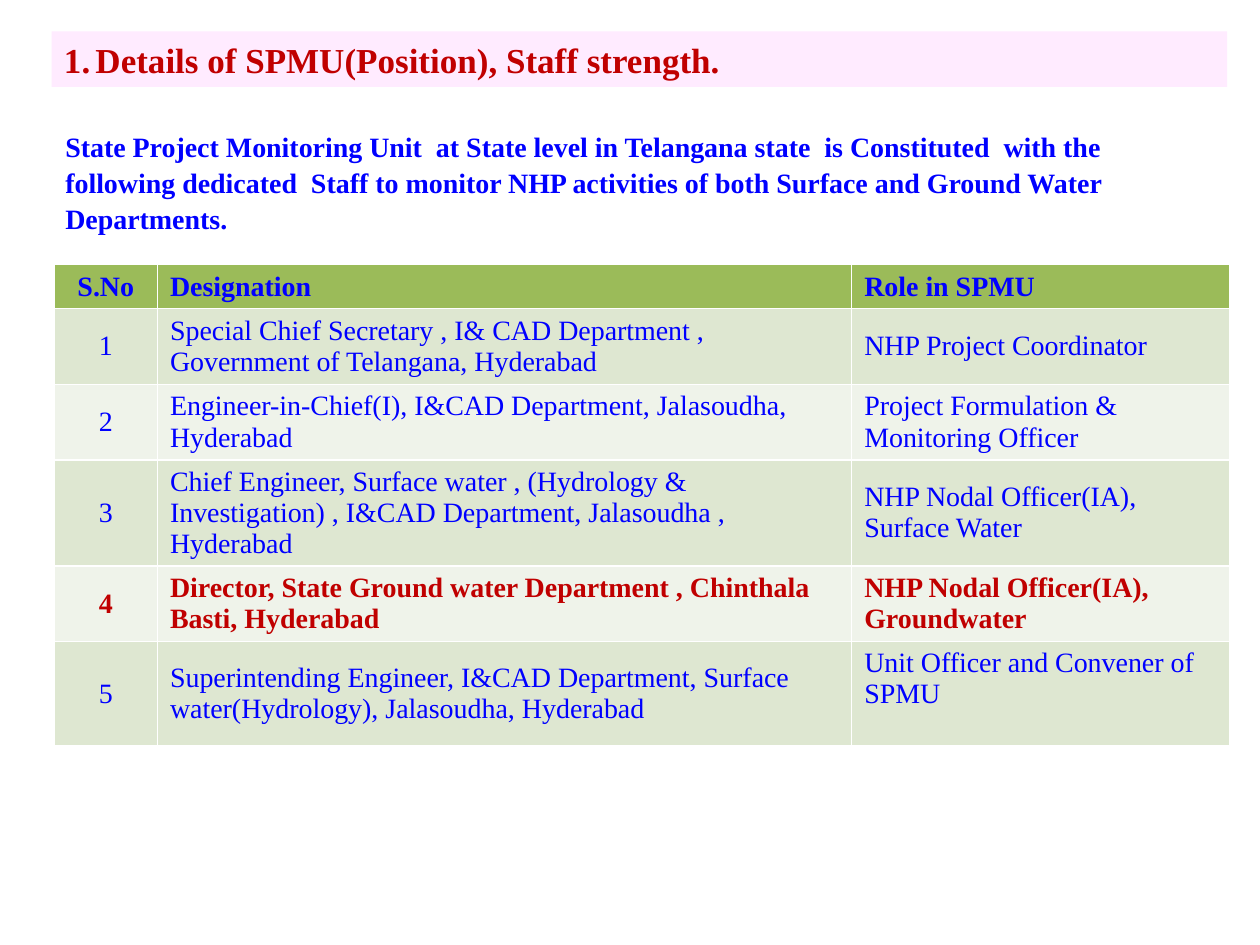
from dataclasses import dataclass

from lxml.etree import SubElement
from pptx import Presentation
from pptx.dml.color import RGBColor
from pptx.enum.shapes import MSO_SHAPE as SHAPE
from pptx.enum.text import MSO_ANCHOR as ANCHOR, PP_ALIGN as ALIGN
from pptx.oxml.ns import qn
from pptx.util import Inches, Pt


@dataclass(frozen=True)
class Theme:
    font: str = "Times New Roman"
    title_size: int = 20
    body_size: int = 16
    blue: str = "0000FF"
    red: str = "C00000"
    title_fill: str = "FFEBFF"
    header_fill: str = "9BBB59"
    bands: tuple = ("DEE7D1", "EFF3EA")


THEME = Theme()
TITLE = "Details of SPMU(Position), Staff strength."
INTRO = (
    "State Project Monitoring Unit  at State level in Telangana state  is "
    "Constituted  with the  following dedicated  Staff to monitor NHP "
    "activities of both Surface and Ground Water Departments."
)
HEADER = ("S.No", "Designation", "Role in SPMU")
STAFF = (
    ("Special Chief Secretary , I& CAD Department , Government of Telangana, Hyderabad",
     "NHP Project Coordinator"),
    ("Engineer-in-Chief(I), I&CAD Department, Jalasoudha, Hyderabad",
     "Project Formulation & Monitoring Officer"),
    ("Chief Engineer, Surface water , (Hydrology & Investigation) , "
     "I&CAD Department, Jalasoudha , Hyderabad",
     "NHP Nodal Officer(IA), Surface Water"),
    ("Director, State Ground water Department , Chinthala Basti, Hyderabad",
     "NHP Nodal Officer(IA), Groundwater"),
    ("Superintending Engineer, I&CAD Department, Surface water(Hydrology), "
     "Jalasoudha, Hyderabad",
     "Unit Officer and Convener of  SPMU"),
)
HIGHLIGHTED_ROW = 4
COLUMN_WIDTHS = (0.82, 5.51, 3.0)
ROW_HEIGHTS = (0.35, 0.6, 0.6, 0.84, 0.6, 0.83)


def set_fill(target, color):
    target.fill.solid()
    target.fill.fore_color.rgb = RGBColor.from_string(color)


def write(tf, text, size, color, bold, align=ALIGN.LEFT):
    tf.text = text
    tf.word_wrap = True
    p = tf.paragraphs[0]
    p.alignment = align
    font = p.runs[0].font
    font.name = THEME.font
    font.size = Pt(size)
    font.bold = bold
    font.color.rgb = RGBColor.from_string(color)
    return p


def add_title(slide, box):
    sp = slide.shapes.add_shape(SHAPE.RECTANGLE, *box)
    sp.shadow.inherit = False
    set_fill(sp, THEME.title_fill)
    sp.line.fill.background()
    p = write(sp.text_frame, TITLE, THEME.title_size, THEME.red, True)
    pPr = p._p.get_or_add_pPr()
    indent = Inches(0.25)
    pPr.set("marL", str(indent))
    pPr.set("indent", str(-indent))
    SubElement(pPr, qn("a:buAutoNum"), type="arabicPeriod")


def add_intro(slide, box):
    tf = slide.shapes.add_textbox(*box).text_frame
    p = write(tf, INTRO, THEME.body_size, THEME.blue, True)
    p.line_spacing = 1.07


def add_staff_table(slide, box):
    rows = [HEADER] + [(str(n), *staff) for n, staff in enumerate(STAFF, 1)]
    table = slide.shapes.add_table(len(rows), len(HEADER), *box).table
    for column, width in zip(table.columns, COLUMN_WIDTHS):
        column.width = Inches(width)
    for row, height in zip(table.rows, ROW_HEIGHTS):
        row.height = Inches(height)

    for i, texts in enumerate(rows):
        fill = THEME.bands[(i - 1) % 2] if i else THEME.header_fill
        color = THEME.red if i == HIGHLIGHTED_ROW else THEME.blue
        for j, text in enumerate(texts):
            cell = table.cell(i, j)
            set_fill(cell, fill)
            cell.vertical_anchor = ANCHOR.MIDDLE
            write(cell.text_frame, text, THEME.body_size, color,
                  i in (0, HIGHLIGHTED_ROW), ALIGN.LEFT if j else ALIGN.CENTER)
    table.cell(len(STAFF), 2).vertical_anchor = ANCHOR.TOP


def main():
    prs = Presentation()
    prs.slide_width, prs.slide_height = Inches(10), Inches(7.5)
    slide = prs.slides.add_slide(prs.slide_layouts[6])
    width = Inches(9.33)
    add_staff_table(slide, (Inches(0.43), Inches(2.1), width, Inches(sum(ROW_HEIGHTS))))
    add_title(slide, (Inches(0.41), Inches(0.25), width, Inches(0.44)))
    add_intro(slide, (Inches(0.42), Inches(0.96), width, Inches(0.91)))
    prs.save("out.pptx")


if __name__ == "__main__":
    main()
